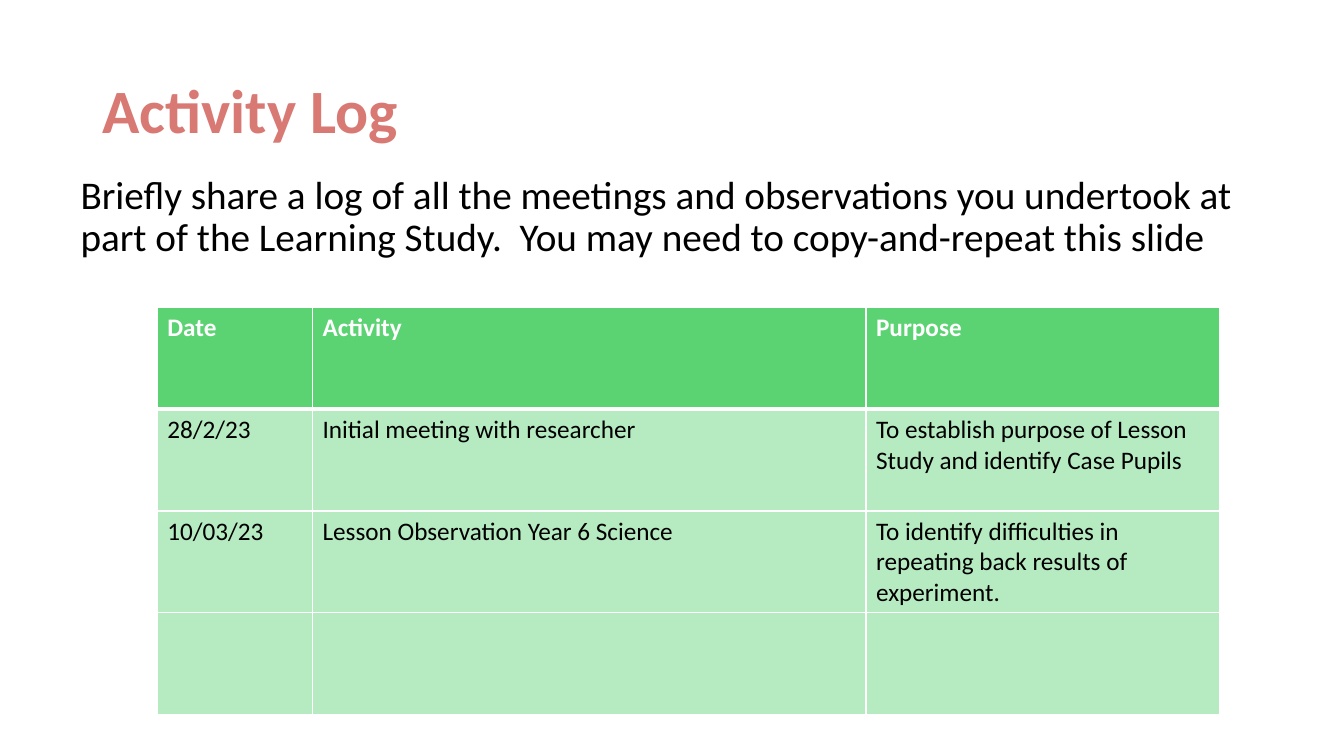
from dataclasses import dataclass

from lxml import etree
from pptx import Presentation
from pptx import util as u
from pptx.dml.color import RGBColor
from pptx.enum import text
from pptx.oxml import ns

PX = 9144  # EMU per px, 100 px to the inch


@dataclass(frozen=True)
class Theme:
    font: str = "Calibri"
    heading: str = "D97974"
    ink: str = "000000"
    paper: str = "FFFFFF"
    green: str = "5BD373"
    body_opacity: int = 44
    heading_size: int = 44
    intro_size: int = 28
    table_size: int = 18


@dataclass(frozen=True)
class Box:
    left: int
    top: int
    width: int
    height: int

    def emu(self) -> list[int]:
        return [px * PX for px in (self.left, self.top, self.width, self.height)]


@dataclass(frozen=True)
class TextBlock:
    box: Box
    wording: str
    size: int
    color: str
    bold: bool = False
    anchor: text.MSO_ANCHOR = text.MSO_ANCHOR.TOP
    space_before: int = 0


@dataclass(frozen=True)
class LogEntry:
    date: str = ""
    activity: str = ""
    purpose: str = ""


THEME = Theme()
HEADING = TextBlock(Box(92, 40, 1150, 145), "Activity Log", THEME.heading_size,
                    THEME.heading, bold=True, anchor=text.MSO_ANCHOR.MIDDLE)
INTRO = TextBlock(
    Box(70, 169, 1171, 507),
    "Briefly share a log of all the meetings and observations you undertook at "
    "part of the Learning Study.  You may need to copy-and-repeat this slide",
    THEME.intro_size, THEME.ink, space_before=10)

LOG_BOX = Box(156, 305, 1054, 404)
LOG_COLUMNS = (154, 549, 351)
LOG = (
    LogEntry("Date", "Activity", "Purpose"),
    LogEntry("28/2/23", "Initial meeting with researcher",
             "To establish purpose of Lesson Study and identify Case Pupils"),
    LogEntry("10/03/23", "Lesson Observation Year 6 Science",
             "To identify difficulties in repeating back results of experiment."),
    LogEntry(),
)


def style_font(font, size: int, color: str, bold: bool) -> None:
    font.name = THEME.font
    font.size = u.Pt(size)
    font.bold = bold
    font.color.rgb = RGBColor.from_string(color)


def add_text(slide, block: TextBlock) -> None:
    frame = slide.shapes.add_textbox(*block.box.emu()).text_frame
    frame.word_wrap = True
    frame.vertical_anchor = block.anchor
    frame.text = block.wording
    paragraph = frame.paragraphs[0]
    paragraph.line_spacing = 0.9
    paragraph.space_before = u.Pt(block.space_before)
    style_font(paragraph.runs[0].font, block.size, block.color, block.bold)


def add_border(cell, side: str, points: int) -> None:
    properties = cell._tc.get_or_add_tcPr()
    line = etree.SubElement(properties, ns.qn(f"a:ln{side}"), w=str(u.Pt(points)))
    fill = etree.SubElement(line, ns.qn("a:solidFill"))
    etree.SubElement(fill, ns.qn("a:srgbClr"), val=THEME.paper)


def style_cell(cell, wording: str, row: int) -> None:
    is_header = row == 0
    # Borders: a thick rule separates the header from the entries
    add_border(cell, "L", 1)
    add_border(cell, "R", 1)
    add_border(cell, "T", 3 if row == 1 else 1)
    add_border(cell, "B", 3 if is_header else 1)

    # Fill: entries are a see-through tint of the header
    cell.fill.solid()
    cell.fill.fore_color.rgb = RGBColor.from_string(THEME.green)
    if not is_header:
        tint = cell._tc.tcPr.find(f"{ns.qn('a:solidFill')}/{ns.qn('a:srgbClr')}")
        etree.SubElement(tint, ns.qn("a:alpha"), val=str(THEME.body_opacity * 1000))

    cell.text_frame.text = wording
    for run in cell.text_frame.paragraphs[0].runs:
        style_font(run.font, THEME.table_size,
                   THEME.paper if is_header else THEME.ink, is_header)


def add_log(slide) -> None:
    table = slide.shapes.add_table(len(LOG), len(LOG_COLUMNS), *LOG_BOX.emu()).table
    for column, width in zip(table.columns, LOG_COLUMNS):
        column.width = width * PX
    for row, entry in enumerate(LOG):
        for column, wording in enumerate((entry.date, entry.activity, entry.purpose)):
            style_cell(table.cell(row, column), wording, row)


def main() -> None:
    deck = Presentation()
    deck.slide_width, deck.slide_height = 1333 * PX, 750 * PX
    slide = deck.slides.add_slide(deck.slide_layouts[6])

    # Heading and introduction
    for block in (HEADING, INTRO):
        add_text(slide, block)

    # Activity table
    add_log(slide)
    deck.save("out.pptx")


if __name__ == "__main__":
    main()
